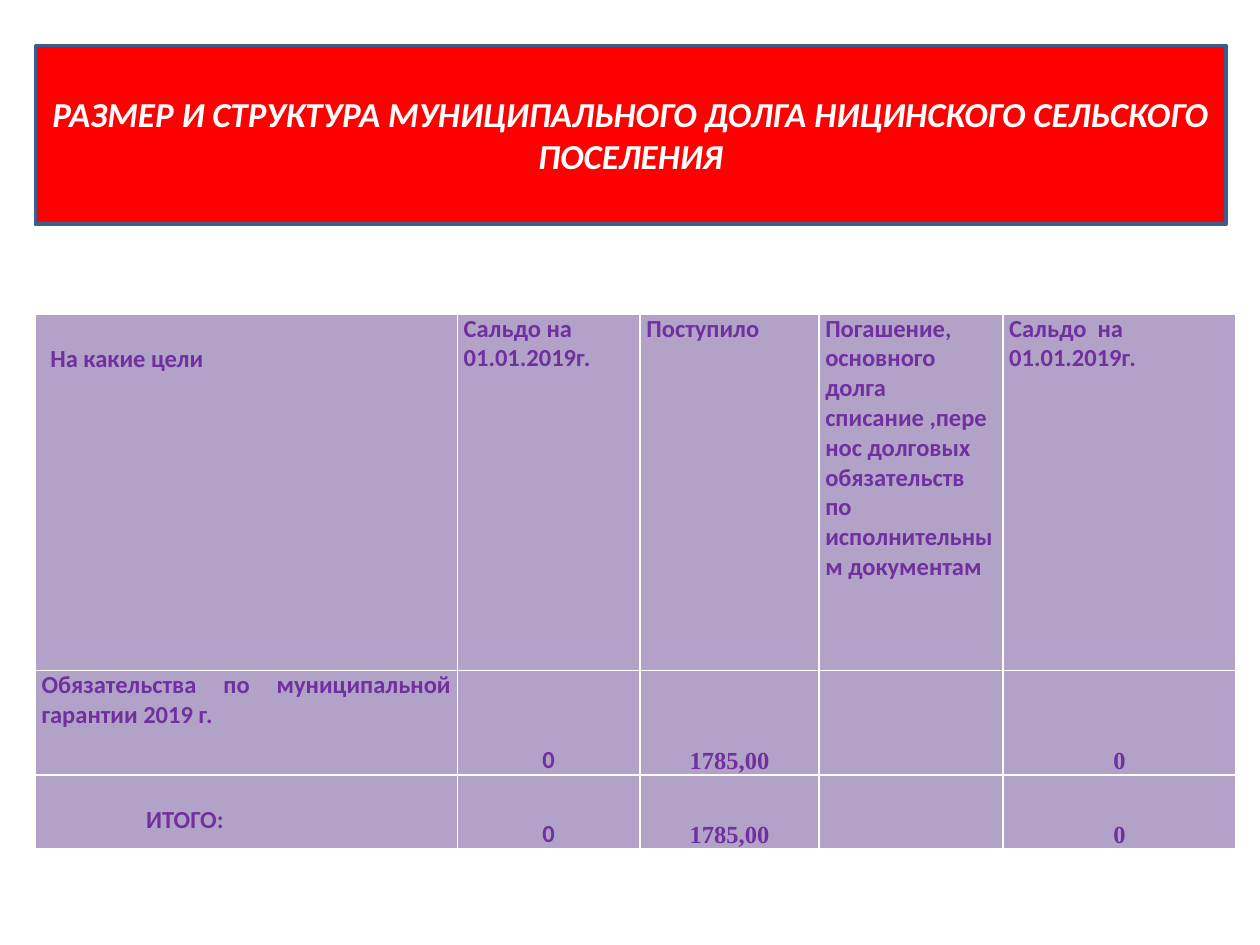
from lxml import etree
from pptx import Presentation
from pptx.dml.color import RGBColor
from pptx.enum import text
from pptx.oxml.ns import qn
from pptx.util import Inches, Pt

RED = RGBColor(0xFF, 0x00, 0x00)
NAVY = RGBColor(0x3A, 0x5F, 0x8C)
WHITE = RGBColor(0xFF, 0xFF, 0xFF)
LILAC = RGBColor(0xB3, 0xA2, 0xC7)
PURPLE = RGBColor(0x70, 0x30, 0xA0)
JUSTIFY, CENTER, LEFT = (text.PP_ALIGN.JUSTIFY, text.PP_ALIGN.CENTER,
                         text.PP_ALIGN.LEFT)

# Content
TITLE = "РАЗМЕР И СТРУКТУРА МУНИЦИПАЛЬНОГО ДОЛГА НИЦИНСКОГО СЕЛЬСКОГО ПОСЕЛЕНИЯ"
ROWS = [
    ["На какие цели", "Сальдо на\n01.01.2019г.", "Поступило",
     "Погашение, основного долга списание ,перенос долговых обязательств по"
     "  исполнительным документам",
     "Сальдо  на\n01.01.2019г."],
    ["Обязательства по муниципальной гарантии 2019 г.", "0", "1785,00", "", "0"],
    ["ИТОГО:", "0", "1785,00", "", "0"],
]
COLUMN_WIDTHS = [3.35, 1.45, 1.42, 1.46, 1.85]
ROW_HEIGHTS = [2.83, 0.83, 0.59]
LABEL_OFFSETS = {0: (0.07, 0.24), 2: (0.83, 0.24)}  # row: (left, top)
LEFT_ALIGNED_HEADERS = (2, 3)
SERIF_COLUMNS = (2, 4)
EDGE, CELL_MARGIN = 0.28, 0.05


def style_font(font, size, color, name="Calibri"):
    font.name, font.size, font.bold = name, Pt(size), True
    font.color.rgb = color


def add_borders(cell):
    properties = cell._tc.get_or_add_tcPr()
    for index, side in enumerate(("lnL", "lnR", "lnT", "lnB")):
        line = etree.Element(qn("a:" + side), w=str(Pt(1)))
        fill = etree.SubElement(line, qn("a:solidFill"))
        etree.SubElement(fill, qn("a:srgbClr"), val=str(WHITE))
        properties.insert(index, line)


def fill_cell(cell, content, row, column):
    is_value = row > 0 and column > 0
    left, top = LABEL_OFFSETS.get(row, (0, 0)) if column == 0 else (0, 0)
    cell.margin_left, cell.margin_right = Inches(CELL_MARGIN + left), Inches(CELL_MARGIN)
    cell.margin_top, cell.margin_bottom = Inches(top), 0
    cell.fill.solid()
    cell.fill.fore_color.rgb = LILAC
    add_borders(cell)
    cell.text = content
    if is_value:
        cell.vertical_anchor = text.MSO_ANCHOR.BOTTOM
        alignment = CENTER
    else:
        alignment = LEFT if column in LEFT_ALIGNED_HEADERS else JUSTIFY
    serif = is_value and column in SERIF_COLUMNS
    for para in cell.text_frame.paragraphs:
        para.alignment = alignment
        style_font(para.font, 14, PURPLE, "Times New Roman" if serif else "Calibri")


deck = Presentation()
deck.slide_width, deck.slide_height = Inches(10), Inches(7.5)
page = deck.slides.add_slide(deck.slide_layouts[5])

# Title banner
title = page.shapes.title
title.left, title.top = Inches(EDGE), Inches(0.36)
title.width, title.height = Inches(9.45), Inches(1.42)
title.fill.solid()
title.fill.fore_color.rgb = RED
title.line.color.rgb = NAVY
title.line.width = Pt(2)
title.text_frame.text = TITLE
title.text_frame.vertical_anchor = text.MSO_ANCHOR.MIDDLE
para = title.text_frame.paragraphs[0]
para.alignment = CENTER
style_font(para.font, 20, WHITE)
para.font.italic = True

# Debt table
table = page.shapes.add_table(
    len(ROWS), len(COLUMN_WIDTHS), Inches(EDGE), Inches(2.49),
    Inches(sum(COLUMN_WIDTHS)), Inches(sum(ROW_HEIGHTS))).table
for column, width in zip(table.columns, COLUMN_WIDTHS):
    column.width = Inches(width)
for row, height in zip(table.rows, ROW_HEIGHTS):
    row.height = Inches(height)
for row, contents in enumerate(ROWS):
    for column, content in enumerate(contents):
        fill_cell(table.cell(row, column), content, row, column)

deck.save("out.pptx")
